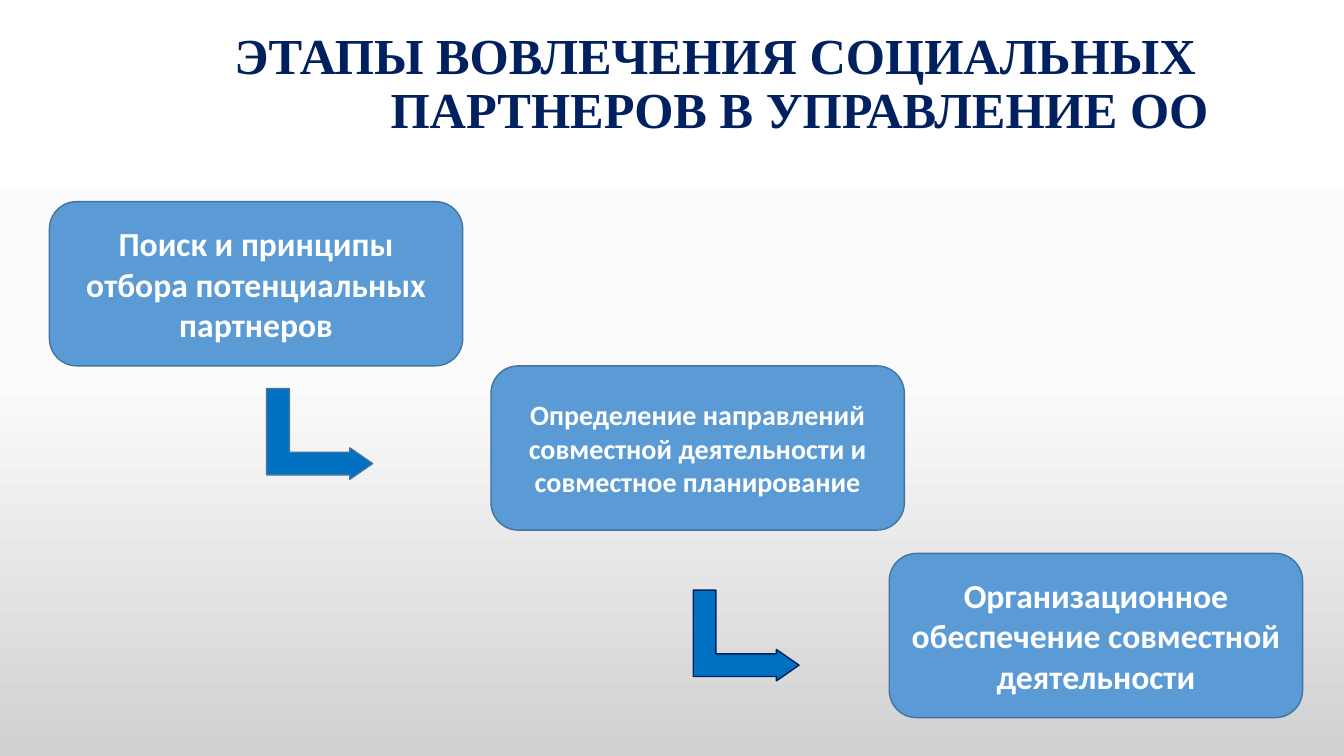
from copy import deepcopy

from pptx import Presentation
from pptx.dml.color import RGBColor
from pptx.enum.shapes import MSO_SHAPE
from pptx.enum.text import MSO_ANCHOR, PP_ALIGN
from pptx.oxml.ns import qn
from pptx.util import Inches, Pt

ROUNDED = MSO_SHAPE.ROUNDED_RECTANGLE
BENT_ARROW = MSO_SHAPE.BENT_UP_ARROW
MIDDLE = MSO_ANCHOR.MIDDLE
CENTER, RIGHT = PP_ALIGN.CENTER, PP_ALIGN.RIGHT

COLORS = {
    "navy": "002060",
    "box": "5B9BD5",
    "outline": "43739E",
    "arrow": "0070C0",
    "white": "FFFFFF",
}
BACKGROUND_STOPS = [(0, "FFFFFF"), (0.5, "FBFBFB"), (1, "D1D1D1")]


class StageSlide:
    title_font = "Times New Roman"
    body_font = "Calibri"
    box_size = (4.1, 1.63)
    arrow_size = (0.9, 1.05)

    def __init__(self, presentation):
        self.slide = presentation.slides.add_slide(presentation.slide_layouts[6])

    def background(self, stops):
        fill = self.slide.background.fill
        fill.gradient()
        fill.gradient_angle = 270
        stop_list = self.slide.element.find(".//" + qn("a:gsLst"))
        stop_list.insert(1, deepcopy(stop_list[0]))
        for stop, (position, color) in zip(fill.gradient_stops, stops):
            stop.position = position
            stop.color.rgb = RGBColor.from_string(color)

    def set_text(self, shape, text, font, size, color, alignment):
        frame = shape.text_frame
        frame.word_wrap = True
        frame.vertical_anchor = MIDDLE
        paragraph = frame.paragraphs[0]
        paragraph.text = text
        paragraph.alignment = alignment
        paragraph.font.name = font
        paragraph.font.size = Pt(size)
        paragraph.font.bold = True
        paragraph.font.color.rgb = RGBColor.from_string(COLORS[color])
        return paragraph

    def title(self, text, left, top, width, height):
        shape = self.slide.shapes.add_textbox(
            Inches(left), Inches(top), Inches(width), Inches(height))
        paragraph = self.set_text(shape, text, self.title_font, 36, "navy", RIGHT)
        paragraph.line_spacing = 0.9

    def preset(self, kind, left, top, size, fill, line):
        width, height = size
        shape = self.slide.shapes.add_shape(
            kind, Inches(left), Inches(top), Inches(width), Inches(height))
        shape.shadow.inherit = False
        shape.fill.solid()
        shape.fill.fore_color.rgb = RGBColor.from_string(COLORS[fill])
        shape.line.color.rgb = RGBColor.from_string(COLORS[line])
        shape.line.width = Pt(1)
        return shape

    def stage(self, text, left, top, size):
        shape = self.preset(ROUNDED, left, top, self.box_size, "box", "outline")
        self.set_text(shape, text, self.body_font, size, "white", CENTER)

    def arrow(self, left, top, line):
        shape = self.preset(BENT_ARROW, left, top, self.arrow_size, "arrow", line)
        shape.rotation = 90
        shape.adjustments[1] = 0.173


def main():
    presentation = Presentation()
    presentation.slide_width = Inches(13.33)
    presentation.slide_height = Inches(7.5)

    # Background and title
    page = StageSlide(presentation)
    page.background(BACKGROUND_STOPS)
    page.title("ЭТАПЫ ВОВЛЕЧЕНИЯ СОЦИАЛЬНЫХ \nПАРТНЕРОВ В УПРАВЛЕНИЕ ОО",
               1.24, 0.12, 10.85, 1.45)

    # Stages descending from left to right
    for text, left, top, size in [
        ("Поиск и принципы отбора потенциальных партнеров", 0.49, 2, 24),
        ("Определение направлений совместной деятельности и совместное планирование",
         4.87, 3.63, 20),
        ("Организационное обеспечение совместной деятельности", 8.82, 5.49, 24),
    ]:
        page.stage(text, left, top, size)

    # Arrows between the stages
    page.arrow(2.72, 3.78, "outline")
    page.arrow(6.95, 5.78, "navy")

    presentation.save("out.pptx")


if __name__ == "__main__":
    main()
